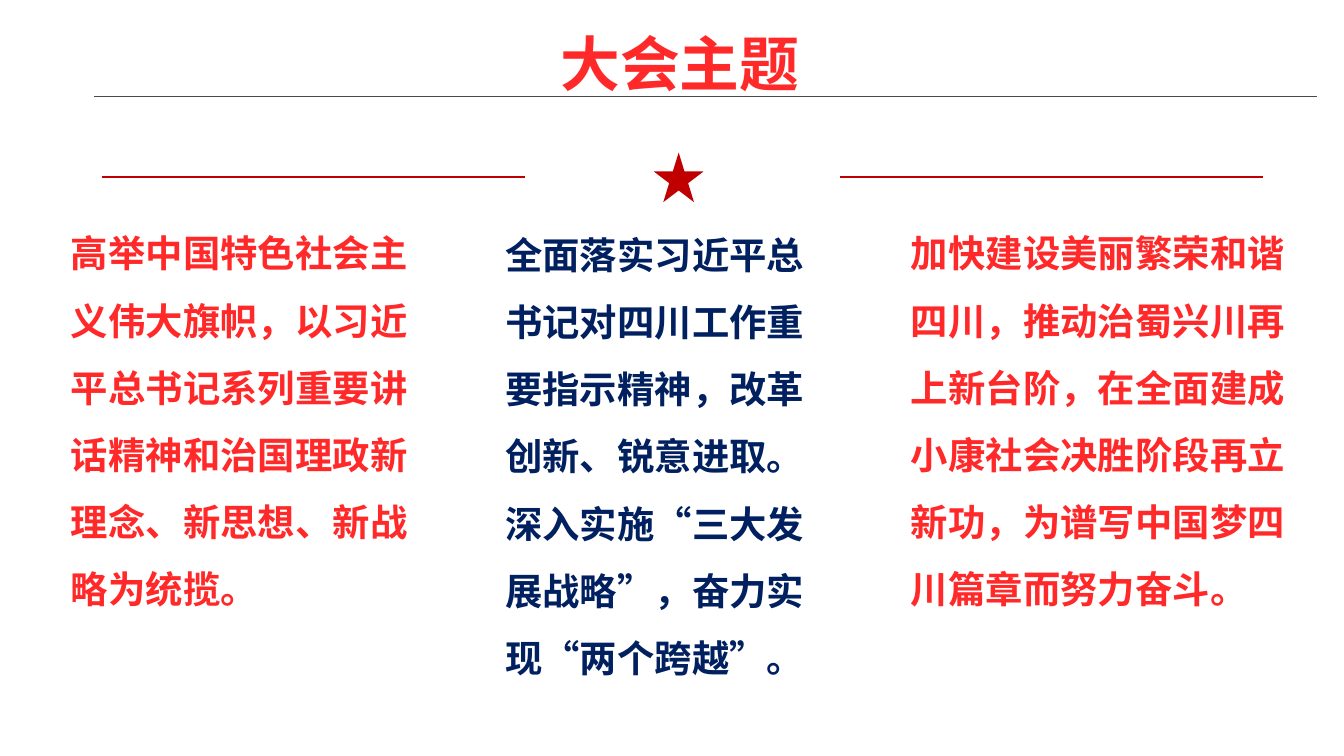
from lxml import etree
from pptx import Presentation
from pptx.dml.color import RGBColor
from pptx.enum.shapes import MSO_CONNECTOR, MSO_SHAPE
from pptx.enum.text import MSO_AUTO_SIZE, PP_ALIGN
from pptx.oxml.ns import qn
from pptx.util import Inches, Pt

STRAIGHT = MSO_CONNECTOR.STRAIGHT
STAR = MSO_SHAPE.STAR_5_POINT
LEFT, CENTER = PP_ALIGN.LEFT, PP_ALIGN.CENTER
FIT_SHAPE = MSO_AUTO_SIZE.SHAPE_TO_FIT_TEXT

RED = RGBColor(0xFF, 0x29, 0x29)
DARK_RED = RGBColor(0xC0, 0x00, 0x00)
NAVY = RGBColor(0x00, 0x20, 0x60)
GRAY = RGBColor(0x4D, 0x49, 0x48)
FONT = "Noto Sans CJK SC"

WIDTH = 10
HEIGHT = WIDTH * 9 / 16
RULE_Y = 1.32
RULE_LENGTH = 3.15
STAR_SIZE = 0.37

# Left, top, width, height, colour and text of each column
COLUMNS = [
    (0.43, 1.5, 2.8, 3.13, RED,
     "高举中国特色社会主义伟大旗帜，以习近平总书记系列重要讲话精神和治国理政新理念、新思想、新战略为统揽。"),
    (3.66, 1.51, 2.65, 3.64, NAVY,
     "全面落实习近平总书记对四川工作重要指示精神，改革创新、锐意进取。深入实施“三大发展战略”，奋力实现“两个跨越”。"),
    (6.68, 1.5, 3.04, 3.13, RED,
     "加快建设美丽繁荣和谐四川，推动治蜀兴川再上新台阶，在全面建成小康社会决胜阶段再立新功，为谱写中国梦四川篇章而努力奋斗。"),
]


def add_rule(slide, start, end, y, color, weight):
    line = slide.shapes.add_connector(
        STRAIGHT, Inches(start), Inches(y), Inches(end), Inches(y))
    line.line.color.rgb = color
    line.line.width = Pt(weight)
    etree.SubElement(line._element.spPr, qn("a:effectLst"))


def add_star(slide, center_x, center_y, size):
    sp = slide.shapes.add_shape(
        STAR, Inches(center_x - size / 2), Inches(center_y - size / 2),
        Inches(size), Inches(size))
    sp.shadow.inherit = False
    sp.fill.solid()
    sp.fill.fore_color.rgb = DARK_RED
    sp.line.fill.background()


def add_text(slide, box, text, size, color, spacing, align=LEFT):
    tf = slide.shapes.add_textbox(*map(Inches, box)).text_frame
    tf.word_wrap = True
    tf.auto_size = FIT_SHAPE
    tf.text = text
    p = tf.paragraphs[0]
    p.alignment = align
    p.line_spacing = spacing
    r = p.runs[0]
    r.font.size = Pt(size)
    r.font.bold = True
    r.font.color.rgb = color
    r.font.name = FONT
    # Chinese characters take the East Asian font
    etree.SubElement(r._r.get_or_add_rPr(), qn("a:ea"), typeface=FONT)


def main():
    prs = Presentation()
    prs.slide_width, prs.slide_height = Inches(WIDTH), Inches(HEIGHT)
    slide = prs.slides.add_slide(prs.slide_layouts[6])

    # Title with its rule
    add_rule(slide, 9.8, 0.7, 0.72, GRAY, 0.75)
    add_text(slide, (2, 0.21, 6.12, 0.59), "大会主题", 32, RED, 0.9, CENTER)

    # Star between two rules
    for left in (0.76, 6.25):
        add_rule(slide, left, left + RULE_LENGTH, RULE_Y, DARK_RED, 1)
    add_star(slide, 5.05, RULE_Y, STAR_SIZE)

    # Three columns of text
    for *box, color, text in COLUMNS:
        add_text(slide, box, text, 20, color, 1.5)

    prs.save("out.pptx")


if __name__ == "__main__":
    main()
